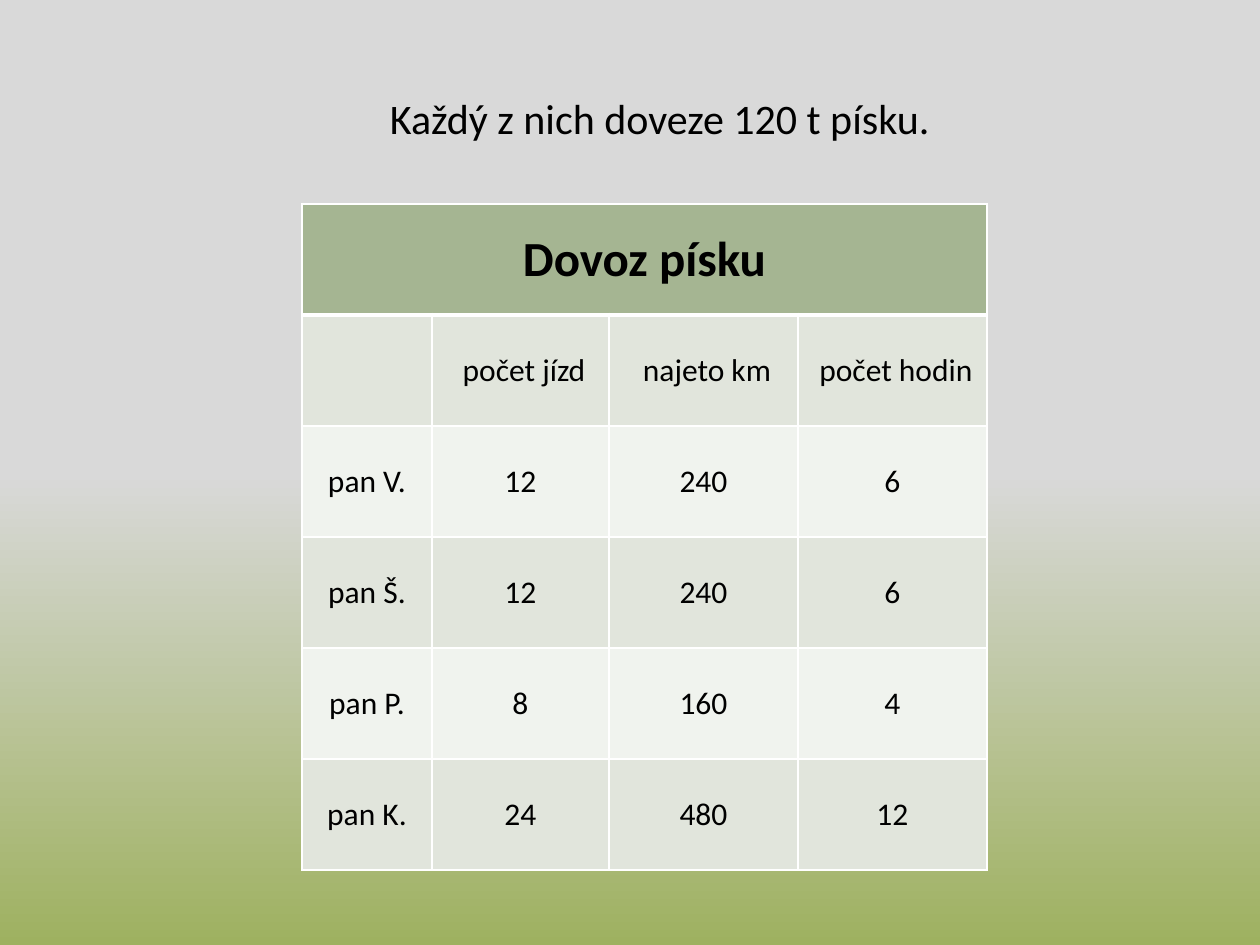
from dataclasses import dataclass

from lxml import etree
from pptx import Presentation
from pptx.dml.color import RGBColor
from pptx.enum import text
from pptx.oxml import ns
from pptx.util import Emu, Pt

PX = 914400 // 126  # EMU in one pixel


@dataclass(frozen=True)
class Theme:
    font: str = "Calibri"
    ink: str = "000000"
    border: str = "FFFFFF"
    header: str = "A5B592"
    bands: tuple = ("E1E5DC", "F0F3EE")
    sky: str = "D9D9D9"
    grass: str = "9EB160"
    title_size: int = 24
    header_size: int = 28
    cell_size: int = 18


THEME = Theme()
TITLE = "Každý z nich doveze 120 t písku."
HEADER = "Dovoz písku"
ROWS = [
    ["", " počet jízd", " najeto km", " počet hodin"],
    ["pan V.", "12", "240", "6"],
    ["pan Š.", "12", "240", "6"],
    ["pan P.", "8", "160", "4"],
    ["pan K.", "24", "480", "12"],
]
COLUMN_WIDTHS = [130, 177, 189, 189]
ROW_HEIGHT = 111


def px(length):
    return Emu(length * PX)


def color(value):
    return RGBColor.from_string(value)


def add_child(parent, tag, **attributes):
    return etree.SubElement(parent, ns.qn(tag), attributes)


def add_run(paragraph, words, size, bold=False, shadow=False):
    paragraph.alignment = text.PP_ALIGN.CENTER
    run = paragraph.add_run()
    run.text = words
    if shadow:
        effects = add_child(run._r.get_or_add_rPr(), "a:effectLst")
        outer = add_child(effects, "a:outerShdw", blurRad="38100",
                          dist="38100", dir="2700000", algn="tl")
        black = add_child(outer, "a:srgbClr", val=THEME.ink)
        add_child(black, "a:alpha", val="43000")
    run.font.name = THEME.font
    run.font.size = Pt(size)
    run.font.bold = bold
    run.font.color.rgb = color(THEME.ink)


def paint_background(slide):
    fill = slide.background.fill
    fill.gradient()
    fill.gradient_angle = 270  # counter-clockwise, so top to bottom
    stops = [(0.5, THEME.sky), (1, THEME.grass)]
    for stop, (position, value) in zip(fill.gradient_stops, stops):
        stop.position = position
        stop.color.rgb = color(value)


def add_title(slide):
    title = slide.shapes.title
    title.left, title.top, title.width, title.height = map(px, (154, 86, 1012, 63))
    frame = title.text_frame
    frame.word_wrap = True
    frame.auto_size = text.MSO_AUTO_SIZE.NONE
    frame.vertical_anchor = text.MSO_ANCHOR.TOP
    add_run(frame.paragraphs[0], TITLE, THEME.title_size)


def style_cell(cell, fill, bottom_width=1):
    # Borders come before the fill in the cell properties
    properties = cell._tc.get_or_add_tcPr()
    for side, width in (("L", 1), ("R", 1), ("T", 1), ("B", bottom_width)):
        line = add_child(properties, f"a:ln{side}", w=str(Pt(width)))
        solid = add_child(line, "a:solidFill")
        add_child(solid, "a:srgbClr", val=THEME.border)
    cell.fill.solid()
    cell.fill.fore_color.rgb = color(fill)
    cell.vertical_anchor = text.MSO_ANCHOR.MIDDLE


def add_sand_table(slide):
    row_count = len(ROWS) + 1
    table = slide.shapes.add_table(
        row_count, len(COLUMN_WIDTHS), px(302), px(204),
        px(sum(COLUMN_WIDTHS)), px(ROW_HEIGHT * row_count)).table
    for column, width in zip(table.columns, COLUMN_WIDTHS):
        column.width = px(width)

    # Header across all columns
    header = table.cell(0, 0)
    header.merge(table.cell(0, len(COLUMN_WIDTHS) - 1))
    for cell in table.rows[0].cells:
        style_cell(cell, THEME.header, bottom_width=3)
    add_run(header.text_frame.paragraphs[0], HEADER, THEME.header_size, bold=True)

    # Column names and drivers in alternating bands
    for row_index, values in enumerate(ROWS):
        for column_index, value in enumerate(values):
            cell = table.cell(row_index + 1, column_index)
            style_cell(cell, THEME.bands[row_index % 2])
            if value:
                add_run(cell.text_frame.paragraphs[0], value, THEME.cell_size,
                        shadow=row_index == 0)


def main():
    presentation = Presentation()
    presentation.slide_width, presentation.slide_height = px(1260), px(945)
    slide = presentation.slides.add_slide(presentation.slide_layouts[5])
    paint_background(slide)
    add_title(slide)
    add_sand_table(slide)
    presentation.save("out.pptx")


if __name__ == "__main__":
    main()
